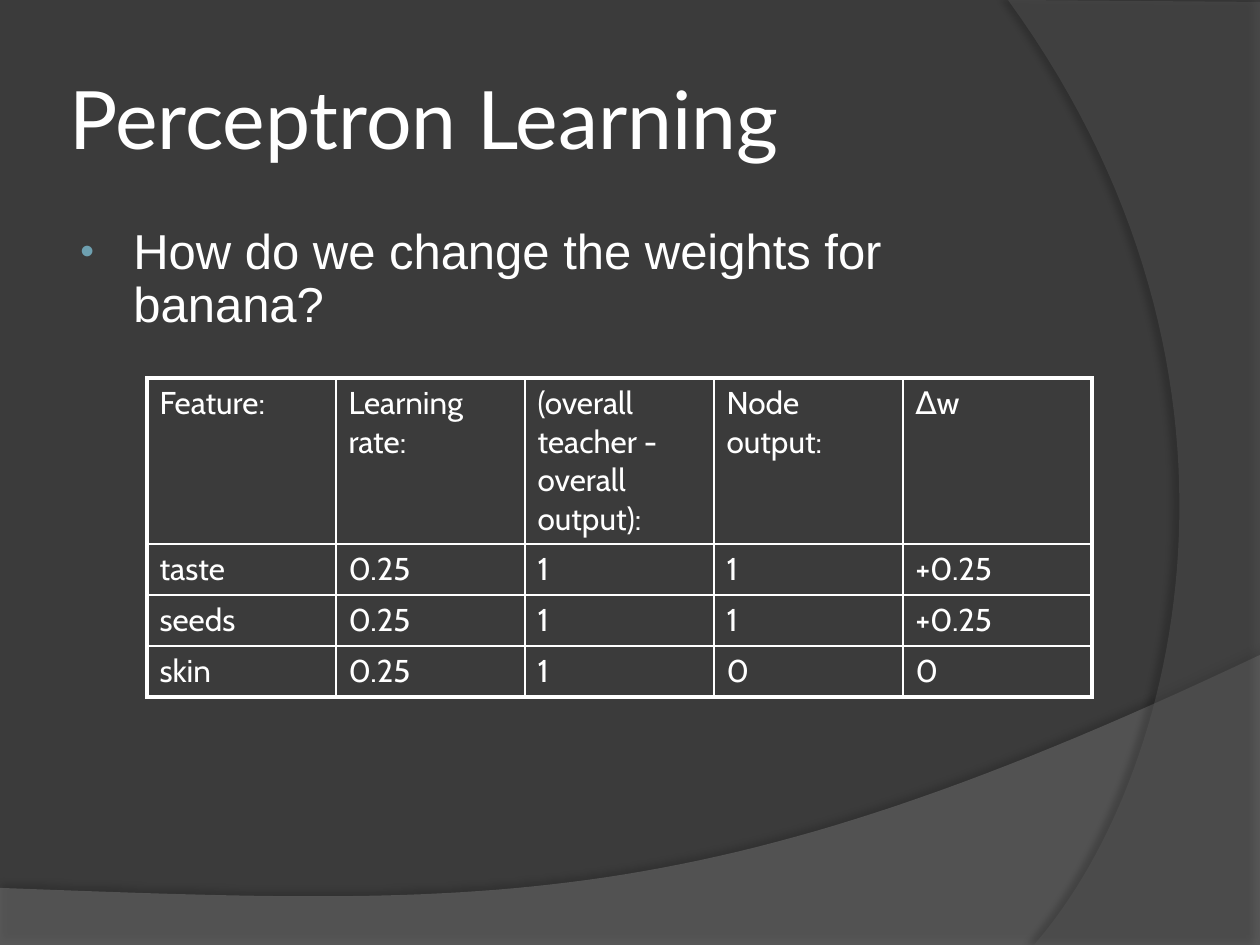
"""Build the perceptron learning slide with its weight-change table."""
from lxml.etree import SubElement
from pptx import Presentation
from pptx.dml.color import RGBColor
from pptx.enum.text import MSO_ANCHOR
from pptx.oxml import parse_xml
from pptx.oxml.ns import nsdecls, qn
from pptx.util import Pt

PX = 914400 / 126
SLIDE_W, SLIDE_H = 1260, 945
WHITE = "FFFFFF"
TITLE = "Perceptron Learning"
QUESTION = "How do we change the weights for banana?"
WEIGHT_ROWS = [
    ["Feature:", "Learning rate:", "(overall teacher - overall output):", "Node output:", "∆w"],
    ["taste", "0.25", "1", "1", "+0.25"],
    ["seeds", "0.25", "1", "1", "+0.25"],
    ["skin", "0.25", "1", "0", "0"],
]
ROW_HEIGHTS = [166, 51, 51, 51]
COLUMN_W = 189
SWOOSHES = [
    {"straight": [(0, 888), (0, 945), (1260, 945), (1260, 655)],
     "curve": [(704, 919), (493, 906), (0, 888)],
     "fill": "7C7C7C", "opacity": 45, "shadow": (35, 4, 3.5, 270)},
    {"straight": [(1260, 2), (1260, 945), (1034, 945)],
     "curve": [(1178, 780), (1283, 378), (1008, 0)],
     "fill": "595959", "opacity": 40, "shadow": (45, 4, 4, 180)},
]


def emu(px):
    return round(px * PX)


def rgb(color):
    return RGBColor.from_string(color)


def set_font(paragraph, name, size):
    paragraph.font.name = name
    paragraph.font.size = Pt(size)
    paragraph.font.color.rgb = rgb(WHITE)


def bezier(start, control_1, control_2, end, steps=60):
    for step in range(1, steps + 1):
        t = step / steps
        yield tuple(
            (1 - t) ** 3 * a + 3 * (1 - t) ** 2 * t * b + 3 * (1 - t) * t ** 2 * c + t ** 3 * d
            for a, b, c, d in zip(start, control_1, control_2, end))


def add_swoosh(slide, straight, curve, fill, opacity, shadow):
    outline = straight + list(bezier(straight[-1], *curve))
    points = [(emu(x), emu(y)) for x, y in outline]
    builder = slide.shapes.build_freeform(*points[0], scale=1.0)
    builder.add_line_segments(points[1:], close=True)
    swoosh = builder.convert_to_shape()
    swoosh.fill.solid()
    swoosh.fill.fore_color.rgb = rgb(fill)
    swoosh.line.fill.background()
    swoosh.shadow.inherit = False
    properties = swoosh._element.spPr
    color = properties.find(qn("a:solidFill")).find(qn("a:srgbClr"))
    SubElement(color, qn("a:alpha"), val=str(opacity * 1000))
    alpha, blur, distance, angle = shadow
    properties.find(qn("a:effectLst")).append(parse_xml(
        f'<a:outerShdw {nsdecls("a")} blurRad="{Pt(blur)}" dist="{Pt(distance)}" '
        f'dir="{angle * 60000}" algn="ctr" rotWithShape="0"><a:srgbClr val="000000">'
        f'<a:alpha val="{alpha * 1000}"/></a:srgbClr></a:outerShdw>'))


def add_text(slide, text, box, font, size, anchor):
    frame = slide.shapes.add_textbox(*map(emu, box)).text_frame
    frame.word_wrap = True
    frame.vertical_anchor = anchor
    paragraph = frame.paragraphs[0]
    paragraph.text = text
    set_font(paragraph, font, size)
    return frame


def add_bullet(paragraph):
    properties = paragraph._p.get_or_add_pPr()
    properties.set("marL", str(emu(58)))
    properties.set("indent", str(emu(-53)))
    color = SubElement(properties, qn("a:buClr"))
    SubElement(color, qn("a:srgbClr"), val="6EA0B0")
    SubElement(properties, qn("a:buSzPct"), val="80000")
    SubElement(properties, qn("a:buFont"), typeface="Arial")
    SubElement(properties, qn("a:buChar"), char="•")
    default_run = properties.find(qn("a:defRPr"))
    if default_run is not None:
        properties.append(default_run)


def set_borders(cell, outer_sides):
    properties = cell._tc.get_or_add_tcPr()
    for position, side in enumerate("LRTB"):
        width = Pt(2.25 if outer_sides[side] else 1)
        properties.insert(position, parse_xml(
            f'<a:ln{side} {nsdecls("a")} w="{width}"><a:solidFill>'
            f'<a:srgbClr val="{WHITE}"/></a:solidFill></a:ln{side}>'))


def add_weight_table(slide, left, top):
    row_count, column_count = len(WEIGHT_ROWS), len(WEIGHT_ROWS[0])
    table = slide.shapes.add_table(
        row_count, column_count, emu(left), emu(top),
        emu(COLUMN_W * column_count), emu(sum(ROW_HEIGHTS))).table
    table.first_row = table.horz_banding = False
    for column in table.columns:
        column.width = emu(COLUMN_W)
    for r, (values, height) in enumerate(zip(WEIGHT_ROWS, ROW_HEIGHTS)):
        table.rows[r].height = emu(height)
        for c, value in enumerate(values):
            cell = table.cell(r, c)
            cell.text = value
            set_font(cell.text_frame.paragraphs[0], "Cabin", 18)
            set_borders(cell, {"L": c == 0, "R": c == column_count - 1,
                               "T": r == 0, "B": r == row_count - 1})
            cell.fill.background()


def main():
    presentation = Presentation()
    presentation.slide_width, presentation.slide_height = emu(SLIDE_W), emu(SLIDE_H)
    slide = presentation.slides.add_slide(presentation.slide_layouts[6])
    slide.background.fill.solid()
    slide.background.fill.fore_color.rgb = rgb("3B3B3B")
    for swoosh in SWOOSHES:
        add_swoosh(slide, **swoosh)

    title = add_text(slide, TITLE, (63, 38, 1029, 158), "Lato", 46, MSO_ANCHOR.MIDDLE)
    title.margin_left = title.margin_right = emu(6)
    question = add_text(slide, QUESTION, (63, 221, 1029, 624), "Arial", 28, MSO_ANCHOR.TOP)
    paragraph = question.paragraphs[0]
    paragraph.line_spacing = 0.9
    paragraph.space_before = Pt(5.6)
    add_bullet(paragraph)
    add_weight_table(slide, 147, 378)
    presentation.save("out.pptx")


if __name__ == "__main__":
    main()
